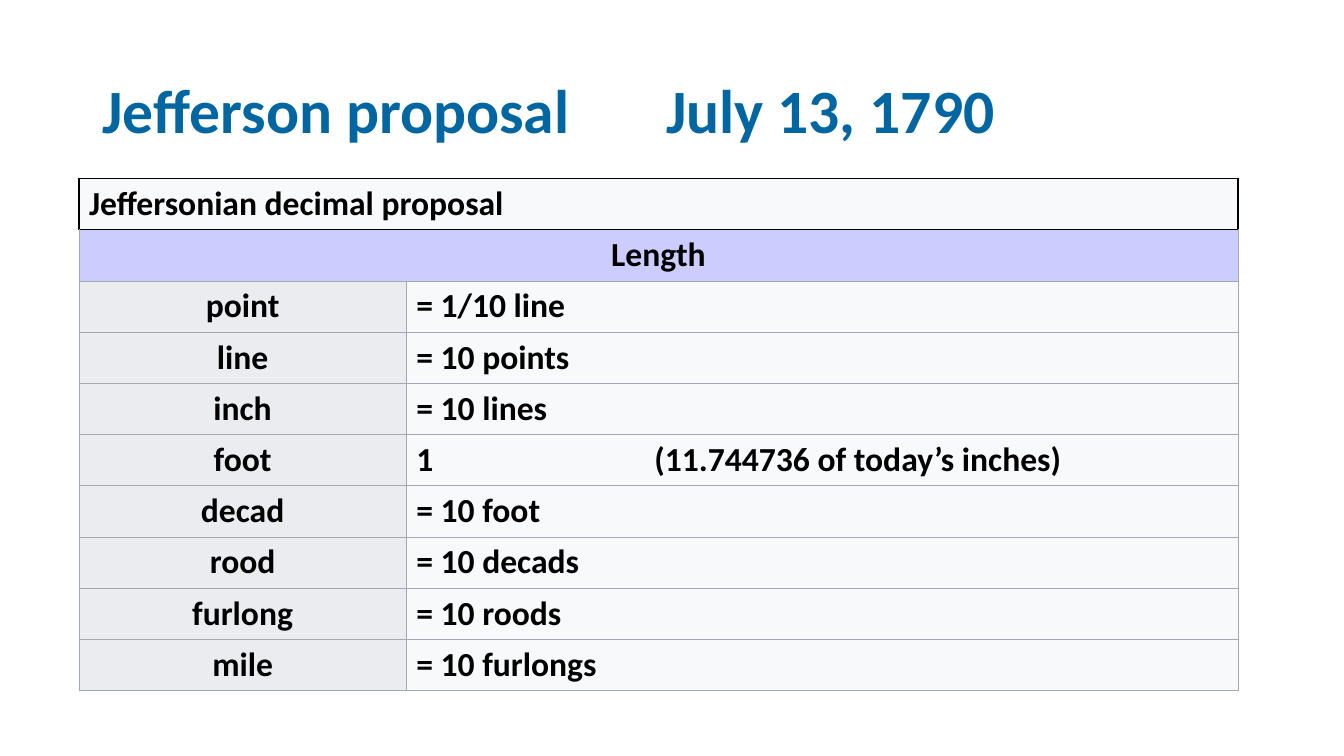
from lxml.etree import SubElement
from pptx import Presentation
from pptx.dml.color import RGBColor
from pptx.enum.text import MSO_ANCHOR, PP_ALIGN
from pptx.oxml.ns import qn
from pptx.util import Cm, Pt

TITLE = "Jefferson proposal\tJuly 13, 1790"
CAPTION = "Jeffersonian decimal proposal"
SECTION = "Length"
UNITS = [
    ("point", "= 1/10 line"),
    ("line", "= 10 points"),
    ("inch", "= 10 lines"),
    ("foot", "1\t(11.744736 of today’s inches)"),
    ("decad", "= 10 foot"),
    ("rood", "= 10 decads"),
    ("furlong", "= 10 roods"),
    ("mile", "= 10 furlongs"),
]
ROWS = [(CAPTION, ""), (SECTION, "")] + UNITS
COLUMN_WIDTHS = [Cm(8.25), Cm(20.96)]
ROW_HEIGHT = Cm(1.29)
TITLE_BOX = {"left": Cm(2.33), "top": Cm(1.01), "width": Cm(29.21), "height": Cm(3.68)}
TITLE_TAB = Cm(14.2)
NOTE_TAB = Cm(6)
TITLE_FONT = {"name": "Calibri", "size": Pt(44), "bold": True}
CELL_FONT = {"name": "Calibri", "size": Pt(24), "bold": True}
GRID = {"lnL": ("A2A9B1", 0.5), "lnR": ("A2A9B1", 0.5),
        "lnT": ("A2A9B1", 0.5), "lnB": ("A2A9B1", 0.5)}
CAPTION_BORDERS = {"lnL": ("000000", 1.5), "lnR": ("000000", 1),
                   "lnT": ("000000", 1.5), "lnB": ("000000", 1)}
SECTION_BORDERS = {**GRID, "lnT": ("000000", 1)}


def color(value):
    return RGBColor.from_string(value)


def set_attributes(target, values):
    for name, value in values.items():
        setattr(target, name, value)


def write(paragraph, text, font, font_color, tab):
    run = paragraph.add_run()
    run.text = text
    set_attributes(run.font, font)
    run.font.color.rgb = color(font_color)
    if "\t" in text:
        tabs = SubElement(paragraph._p.get_or_add_pPr(), qn("a:tabLst"))
        SubElement(tabs, qn("a:tab"), pos=str(int(tab)), algn="l")


def set_borders(cell, borders):
    properties = cell._tc.get_or_add_tcPr()
    for side, (line_color, width) in borders.items():
        line = SubElement(properties, qn(f"a:{side}"), w=str(int(Pt(width))))
        fill = SubElement(line, qn("a:solidFill"))
        SubElement(fill, qn("a:srgbClr"), val=line_color)


def add_title(slide):
    title = slide.shapes.title
    set_attributes(title, TITLE_BOX)
    title.text_frame.vertical_anchor = MSO_ANCHOR.MIDDLE
    paragraph = title.text_frame.paragraphs[0]
    set_attributes(paragraph, {"alignment": PP_ALIGN.LEFT, "line_spacing": 0.9})
    write(paragraph, TITLE, TITLE_FONT, "0066A1", TITLE_TAB)


def cell_style(row, column):
    if row == 0:
        return "F8F9FA", PP_ALIGN.LEFT, CAPTION_BORDERS
    if row == 1:
        return "CCCCFF", PP_ALIGN.CENTER, SECTION_BORDERS
    if column == 0:
        return "EAECF0", PP_ALIGN.CENTER, GRID
    return "F8F9FA", PP_ALIGN.LEFT, GRID


def add_units_table(slide):
    table = slide.shapes.add_table(
        len(ROWS), len(COLUMN_WIDTHS), Cm(1.99), Cm(4.5),
        sum(COLUMN_WIDTHS), ROW_HEIGHT * len(ROWS)).table
    set_attributes(table, {"first_row": False, "horz_banding": False})
    for column, width in zip(table.columns, COLUMN_WIDTHS):
        column.width = width
    for row in table.rows:
        row.height = ROW_HEIGHT
    for row in range(2):
        table.cell(row, 0).merge(table.cell(row, 1))
    for row, texts in enumerate(ROWS):
        for column, text in enumerate(texts):
            cell = table.cell(row, column)
            fill_color, alignment, borders = cell_style(row, column)
            set_borders(cell, borders)
            cell.fill.solid()
            cell.fill.fore_color.rgb = color(fill_color)
            cell.vertical_anchor = MSO_ANCHOR.MIDDLE
            paragraph = cell.text_frame.paragraphs[0]
            paragraph.alignment = alignment
            if text:
                write(paragraph, text, CELL_FONT, "000000", NOTE_TAB)


def main():
    presentation = Presentation()
    set_attributes(presentation, {"slide_width": Cm(33.87), "slide_height": Cm(19.05)})
    slide = presentation.slides.add_slide(presentation.slide_layouts[5])
    add_title(slide)
    add_units_table(slide)
    presentation.save("out.pptx")


if __name__ == "__main__":
    main()
